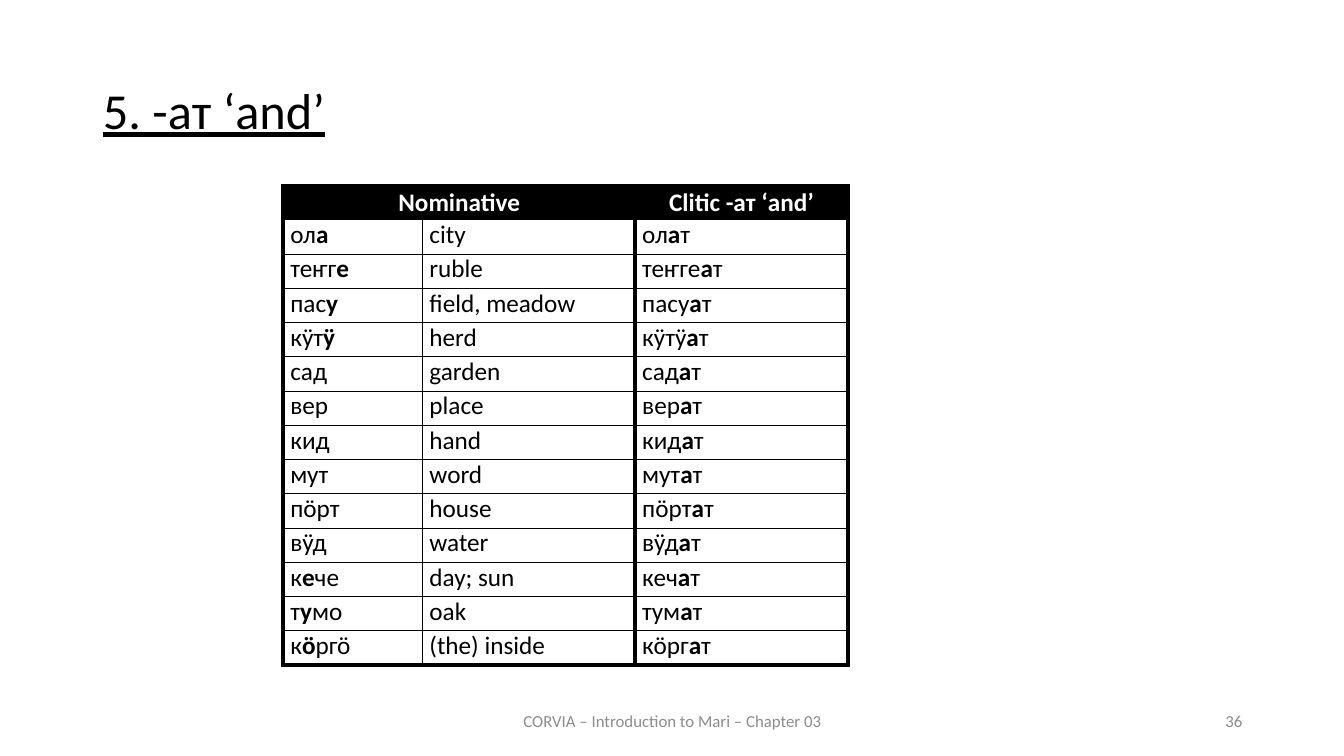
from lxml import etree
from pptx import Presentation
from pptx import util as u
from pptx.dml.color import RGBColor
from pptx.enum import text
from pptx.oxml.ns import qn

FONT = "Calibri"
BLACK, WHITE, GREY = "000000", "FFFFFF", "8C8C8C"
THICK, THIN = 3, 0.5
COLUMN_WIDTHS = (1.38, 2.11, 2.11)
ROW_HEIGHT = 0.34
HEADER = ("Nominative", "", "Clitic -ат ‘and’")
WORDS = (
    ("ол*а*", "city", "ол*а*т"),
    ("теҥг*е*", "ruble", "теҥге*а*т"),
    ("пас*у*", "field, meadow", "пасу*а*т"),
    ("кӱт*ӱ*", "herd", "кӱтӱ*а*т"),
    ("сад", "garden", "сад*а*т"),
    ("вер", "place", "вер*а*т"),
    ("кид", "hand", "кид*а*т"),
    ("мут", "word", "мут*а*т"),
    ("пӧрт", "house", "пӧрт*а*т"),
    ("вӱд", "water", "вӱд*а*т"),
    ("к*е*че", "day; sun", "кеч*а*т"),
    ("т*у*мо", "oak", "тум*а*т"),
    ("к*ӧ*ргӧ", "(the) inside", "кӧрг*а*т"),
)


def color(value):
    return RGBColor.from_string(value)


def style(para, size, value, align):
    para.font.name = FONT
    para.font.size = u.Pt(size)
    para.font.color.rgb = color(value)
    para.alignment = align


def place(shape, left, top, width, height):
    shape.left, shape.top = u.Inches(left), u.Inches(top)
    shape.width, shape.height = u.Inches(width), u.Inches(height)


def add_title(page, wording):
    title = page.shapes.title
    place(title, 0.92, 0.4, 11.5, 1.45)
    title.text_frame.text = wording
    title.text_frame.vertical_anchor = text.MSO_ANCHOR.MIDDLE
    para = title.text_frame.paragraphs[0]
    style(para, 36, BLACK, text.PP_ALIGN.LEFT)
    para.font.underline = True
    para.line_spacing = 0.9


def add_footer(page, wording, left, width, align):
    box = page.shapes.add_textbox(
        u.Inches(left), u.Inches(6.95), u.Inches(width), u.Inches(0.4))
    frame = box.text_frame
    frame.word_wrap = True
    frame.vertical_anchor = text.MSO_ANCHOR.MIDDLE
    frame.text = wording
    style(frame.paragraphs[0], 12, GREY, align)


def set_borders(cell, widths):
    properties = cell._tc.get_or_add_tcPr()
    for side, width in zip("LRTB", widths):
        line = etree.SubElement(properties, qn(f"a:ln{side}"), w=str(u.Pt(width)))
        fill = etree.SubElement(line, qn("a:solidFill"))
        etree.SubElement(fill, qn("a:srgbClr"), val=BLACK)


def fill_cell(cell, wording, is_header):
    cell.margin_left = cell.margin_right = u.Inches(0.07)
    cell.margin_top = cell.margin_bottom = 0
    para = cell.text_frame.paragraphs[0]
    if is_header:
        cell.fill.solid()
        cell.fill.fore_color.rgb = color(BLACK)
        cell.vertical_anchor = text.MSO_ANCHOR.MIDDLE
        style(para, 18, WHITE, text.PP_ALIGN.CENTER)
    else:
        cell.fill.background()
        style(para, 18, BLACK, text.PP_ALIGN.JUSTIFY)
    for index, part in enumerate(wording.split("*")):
        if part:
            span = para.add_run()
            span.text = part
            span.font.bold = is_header or index % 2 == 1


def add_word_table(page):
    rows = (HEADER, *WORDS)
    table = page.shapes.add_table(
        len(rows), len(COLUMN_WIDTHS), u.Inches(2.81), u.Inches(1.84),
        u.Inches(sum(COLUMN_WIDTHS)), u.Inches(ROW_HEIGHT * len(rows))).table
    table.first_row = table.horz_banding = False
    for column, width in zip(table.columns, COLUMN_WIDTHS):
        column.width = u.Inches(width)
    for r, row in enumerate(rows):
        table.rows[r].height = u.Inches(ROW_HEIGHT)
        for c, wording in enumerate(row):
            cell = table.cell(r, c)
            is_header = r == 0
            set_borders(cell, (
                THIN if c == 1 else THICK,
                THIN if c == 0 and not is_header else THICK,
                THICK if is_header else THIN,
                THICK if r == len(rows) - 1 else THIN))
            fill_cell(cell, wording, is_header)
    table.cell(0, 0).merge(table.cell(0, 1))


def main():
    deck = Presentation()
    deck.slide_width, deck.slide_height = u.Inches(13.33), u.Inches(7.5)
    page = deck.slides.add_slide(deck.slide_layouts[5])
    add_title(page, "5. -ат ‘and’")
    add_word_table(page)
    add_footer(page, "CORVIA – Introduction to Mari – Chapter 03",
               4.42, 4.5, text.PP_ALIGN.CENTER)
    add_footer(page, "36", 9.42, 3, text.PP_ALIGN.RIGHT)
    deck.save("out.pptx")


if __name__ == "__main__":
    main()
